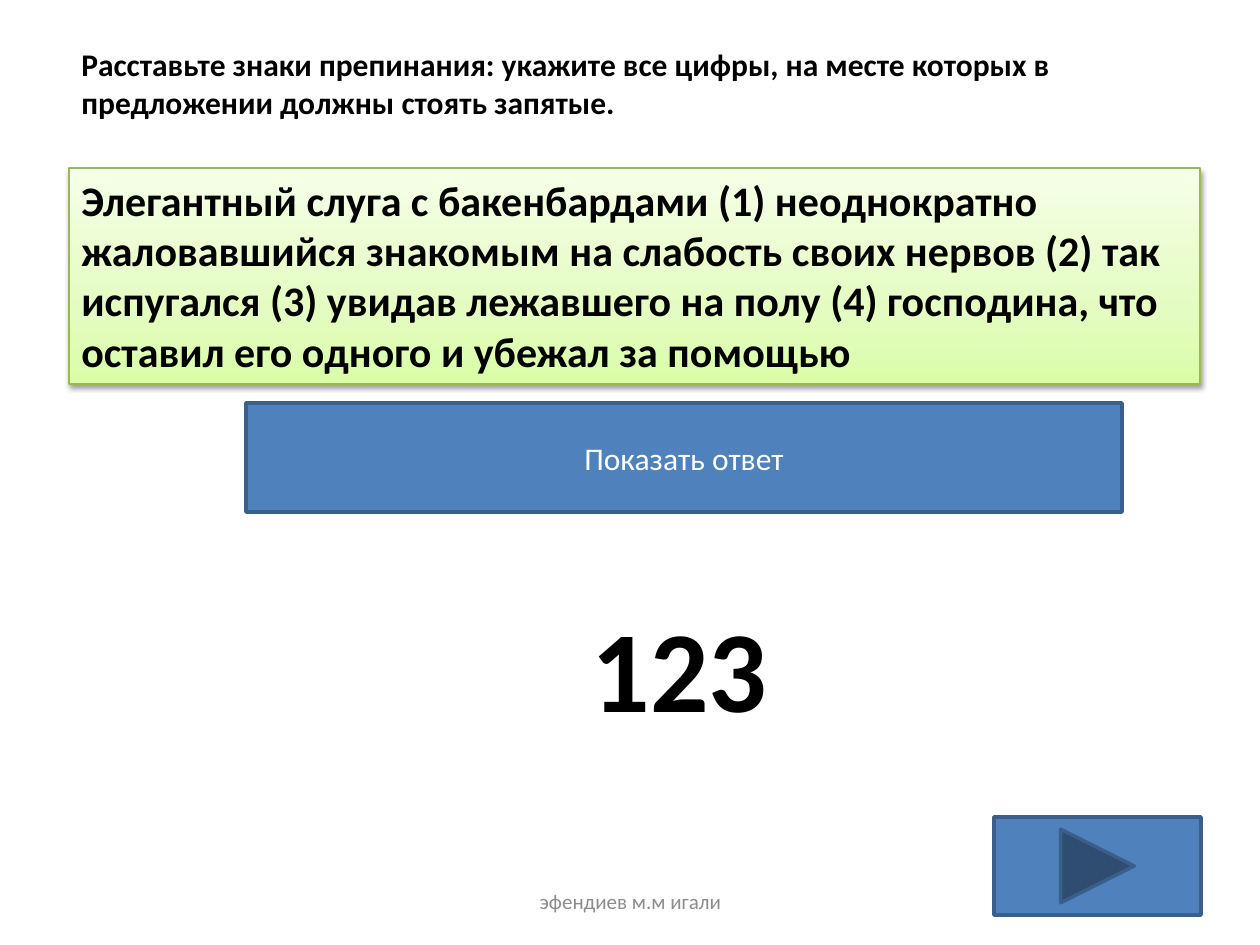
from copy import deepcopy
from lxml.etree import SubElement as Sub
from pptx import Presentation
from pptx.dml.color import RGBColor as Rgb
from pptx.enum.shapes import MSO_SHAPE as Kind
from pptx.enum.text import MSO_ANCHOR as Anchor, PP_ALIGN as Align
from pptx.oxml.ns import qn
from pptx.util import Emu, Pt

INK = {
    "text": "000000", "white": "FFFFFF", "gray": "8C8C8C",
    "blue": "4F81BD", "edge": "3A5F8C", "green": "98B955",
    "low": "DAFDA7", "mid": "E4FCC2", "high": "F5FFE7",
}


def px(n):
    return Emu(round(n * 914400 / 126))


def ink(name):
    return Rgb.from_string(INK[name])


def write(shape, text, size, color="text", bold=False, align=Align.LEFT, anchor=Anchor.TOP):
    frame = shape.text_frame
    frame.word_wrap = True
    frame.vertical_anchor = anchor
    para = frame.paragraphs[0]
    para.text = text
    para.alignment = align
    font = para.font
    font.name, font.size, font.bold = "Calibri", Pt(size), bold
    font.color.rgb = ink(color)


def label(slide, box, text, size, **style):
    write(slide.shapes.add_textbox(*map(px, box)), text, size, **style)


def block(slide, kind, box, edge, width):
    shape = slide.shapes.add_shape(kind, *map(px, box))
    shape.shadow.inherit = False
    shape.line.color.rgb = ink(edge)
    shape.line.width = Pt(width)
    return shape


def button(slide, kind, box):
    shape = block(slide, kind, box, "edge", 2)
    shape.fill.solid()
    shape.fill.fore_color.rgb = ink("blue")
    return shape


def shade(shape):
    fill = shape.fill
    fill.gradient()
    fill.gradient_angle = 90
    first = shape._element.spPr.find(".//" + qn("a:gs"))
    first.addnext(deepcopy(first))
    for stop, (place, name) in zip(fill.gradient_stops, [(0, "low"), (0.35, "mid"), (1, "high")]):
        stop.position = place
        stop.color.rgb = ink(name)


def shadow(shape):
    glow = Sub(shape._element.spPr.find(qn("a:effectLst")), qn("a:outerShdw"),
               blurRad="40000", dist="20000", dir="5400000", rotWithShape="0")
    color = Sub(glow, qn("a:srgbClr"), val=INK["text"])
    Sub(color, qn("a:alpha"), val="38000")


def quote(slide, box, text):
    shape = block(slide, Kind.RECTANGLE, box, "green", 0.75)
    shade(shape)
    shadow(shape)
    write(shape, text, 24, bold=True)


def main():
    deck = Presentation()
    deck.slide_width, deck.slide_height = px(1260), px(945)
    slide = deck.slides.add_slide(deck.slide_layouts[6])
    label(slide, (69, 39, 1142, 89),
          "Расставьте знаки препинания: укажите все цифры, на месте которых в "
          "предложении должны стоять запятые.", 18, bold=True)
    quote(slide, (69, 168, 1131, 216),
          "Элегантный слуга с бакенбардами (1) неоднократно жаловавшийся знакомым "
          "на слабость своих нервов (2) так испугался (3) увидав лежавшего на полу (4) "
          "господина, что оставил его одного и убежал за помощью")
    show = button(slide, Kind.ACTION_BUTTON_CUSTOM, (246, 403, 876, 109))
    write(show, "Показать ответ", 18, "white", align=Align.CENTER, anchor=Anchor.MIDDLE)
    label(slide, (246, 591, 867, 152), "123", 66, bold=True, align=Align.CENTER)
    label(slide, (431, 876, 399, 50), "эфендиев м.м игали", 12, color="gray",
          align=Align.CENTER, anchor=Anchor.MIDDLE)
    button(slide, Kind.ACTION_BUTTON_FORWARD_OR_NEXT, (994, 817, 207, 98))
    deck.save("out.pptx")


if __name__ == "__main__":
    main()
